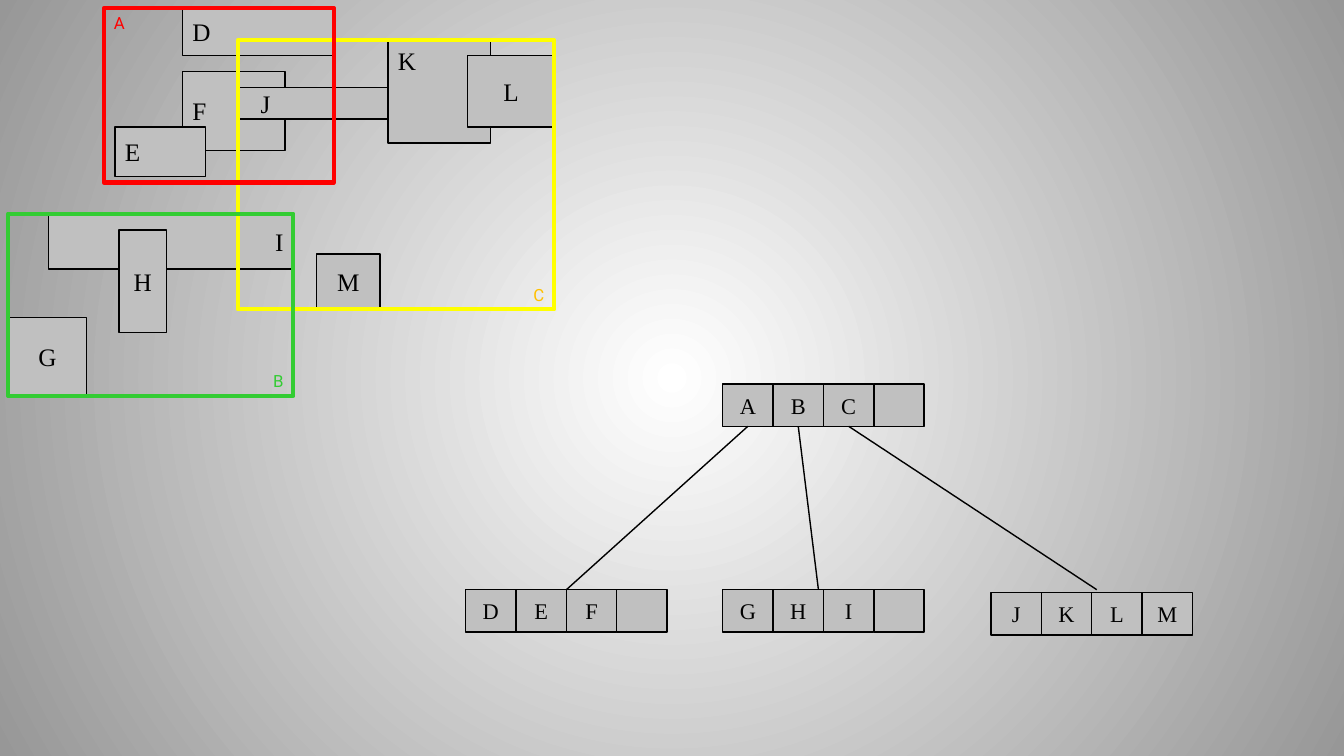
from dataclasses import dataclass

from lxml.etree import SubElement
from pptx import Presentation
from pptx.dml.color import RGBColor
from pptx.enum.shapes import MSO_CONNECTOR, MSO_SHAPE
from pptx.enum.text import MSO_ANCHOR, PP_ALIGN
from pptx.oxml.ns import qn
from pptx.shapes.autoshape import Shape
from pptx.shapes.shapetree import GroupShapes, SlideShapes
from pptx.slide import Slide
from pptx.util import Pt


@dataclass(frozen=True)
class Theme:
    center: str = "FFFFFF"
    edge: str = "979797"
    fill: str = "C0C0C0"
    ink: str = "000000"
    red: str = "FF0000"
    green: str = "33CC33"
    yellow: str = "FFFF00"
    amber: str = "FFC000"
    serif: str = "Times New Roman"
    sans: str = "Roboto"
    object_size: float = 18
    slot_size: float = 16
    region_size: float = 12
    thin: float = 1
    thick: float = 3


THEME = Theme()
LEFT, CENTER, RIGHT = PP_ALIGN.LEFT, PP_ALIGN.CENTER, PP_ALIGN.RIGHT
TOP, MIDDLE, BOTTOM = MSO_ANCHOR.TOP, MSO_ANCHOR.MIDDLE, MSO_ANCHOR.BOTTOM
SLOT_WIDTH, SLOT_HEIGHT, SLOT_COUNT = 36, 30.2, 4


@dataclass(frozen=True)
class Box:
    name: str
    left: float
    top: float
    width: float
    height: float
    align: PP_ALIGN = CENTER
    anchor: MSO_ANCHOR = MIDDLE
    inset: float = 7.2
    size: float = THEME.object_size
    font: str = THEME.serif
    color: str = THEME.ink
    fill: str | None = THEME.fill
    line: str = THEME.ink
    weight: float = THEME.thin


@dataclass(frozen=True)
class Node:
    entries: str
    left: float
    top: float


@dataclass(frozen=True)
class Branch:
    slot: int
    end_x: float
    end_y: float


def region(name: str, left: float, top: float, width: float, height: float,
           line: str, color: str, align: PP_ALIGN, anchor: MSO_ANCHOR) -> Box:
    return Box(name, left, top, width, height, align, anchor,
               size=THEME.region_size, font=THEME.sans, color=color,
               fill=None, line=line, weight=THEME.thick)


# Indexed objects, then the bounding rectangles over them
OBJECTS = [
    Box("D", 130.3, 5.8, 107.3, 33.8, LEFT),
    Box("F", 130.3, 51.1, 73.4, 56.2, LEFT),
    Box("E", 82.1, 90.7, 64.8, 35.3, LEFT),
    Box("J", 169.9, 62.6, 146.9, 22.3, LEFT, inset=16.2),
    Box("K", 277.2, 28.8, 73.4, 73.4, LEFT, TOP),
    Box("L", 334.1, 39.6, 61.9, 51.1),
    Box("M", 226.1, 181.4, 45.4, 39.6),
    Box("I", 34.6, 152.6, 175, 39.6, RIGHT),
    Box("H", 85, 164.2, 33.8, 73.4),
    Box("G", 5.8, 226.8, 56.2, 56.2),
]
REGIONS = [
    region("C", 169.9, 28.8, 226.1, 192.2, THEME.yellow, THEME.amber, RIGHT, BOTTOM),
    region("A", 74.2, 5.8, 164.2, 124.6, THEME.red, THEME.red, LEFT, TOP),
    region("B", 5.8, 152.6, 203.8, 130.3, THEME.green, THEME.green, RIGHT, BOTTOM),
]

# Tree: root, leaves and the branches between them
ROOT = Node("ABC", 516.2, 274.3)
LEAVES = [
    Node("DEF", 332.6, 421.2),
    Node("GHI", 516.2, 421.2),
    Node("JKLM", 707.8, 423.4),
]
BRANCHES = [Branch(0, 404.6, 421.2), Branch(1, 584.6, 421.2), Branch(2, 783.4, 421.2)]


def rgb(color: str) -> RGBColor:
    return RGBColor.from_string(color)


def paint_background(page: Slide) -> None:
    fill = page.background.fill
    fill.gradient()
    for stop, color, position in zip(fill.gradient_stops, (THEME.center, THEME.edge), (0, 1)):
        stop.color.rgb = rgb(color)
        stop.position = position
    # Swap the linear direction for a circle from the slide's centre
    gradient = page.element.find(".//" + qn("a:gradFill"))
    gradient.remove(gradient.find(qn("a:lin")))
    circle = SubElement(gradient, qn("a:path"), {"path": "circle"})
    SubElement(circle, qn("a:fillToRect"), {side: "50000" for side in "ltrb"})


def draw_box(shapes: SlideShapes | GroupShapes, box: Box) -> Shape:
    shape = shapes.add_shape(MSO_SHAPE.RECTANGLE, Pt(box.left), Pt(box.top),
                             Pt(box.width), Pt(box.height))
    shape.shadow.inherit = False
    if box.fill:
        shape.fill.solid()
        shape.fill.fore_color.rgb = rgb(box.fill)
    else:
        shape.fill.background()
    shape.line.color.rgb = rgb(box.line)
    shape.line.width = Pt(box.weight)
    if box.name:
        write_label(shape, box)
    return shape


def write_label(shape: Shape, box: Box) -> None:
    frame = shape.text_frame
    frame.word_wrap = False
    frame.vertical_anchor = box.anchor
    frame.margin_left = Pt(box.inset)
    para = frame.paragraphs[0]
    para.alignment = box.align
    span = para.add_run()
    span.text = box.name
    span.font.size = Pt(box.size)
    span.font.name = box.font
    span.font.color.rgb = rgb(box.color)


def draw_node(page: Slide, node: Node) -> list[Shape]:
    group = page.shapes.add_group_shape()
    return [
        draw_box(group.shapes, Box(entry, node.left + index * SLOT_WIDTH, node.top,
                                   SLOT_WIDTH, SLOT_HEIGHT, size=THEME.slot_size))
        for index, entry in enumerate(node.entries.ljust(SLOT_COUNT).replace(" ", "\0"))
        if entry != "\0"
    ] + [
        draw_box(group.shapes, Box("", node.left + index * SLOT_WIDTH, node.top,
                                   SLOT_WIDTH, SLOT_HEIGHT))
        for index in range(len(node.entries), SLOT_COUNT)
    ]


def draw_branch(page: Slide, slot: Shape, branch: Branch) -> None:
    end_x, end_y = Pt(branch.end_x), Pt(branch.end_y)
    connector = page.shapes.add_connector(MSO_CONNECTOR.STRAIGHT, slot.left,
                                          slot.top, end_x, end_y)
    connector.begin_connect(slot, 2)
    connector.line.color.rgb = rgb(THEME.ink)
    connector.line.width = Pt(THEME.thin)
    SubElement(connector.element.spPr, qn("a:effectLst"))


def main() -> None:
    deck = Presentation()
    deck.slide_width, deck.slide_height = Pt(960), Pt(540)
    page = deck.slides.add_slide(deck.slide_layouts[6])
    paint_background(page)

    for box in OBJECTS + REGIONS:
        draw_box(page.shapes, box)

    root_slots = draw_node(page, ROOT)
    for leaf in LEAVES:
        draw_node(page, leaf)
    for branch in BRANCHES:
        draw_branch(page, root_slots[branch.slot], branch)

    deck.save("out.pptx")


if __name__ == "__main__":
    main()
